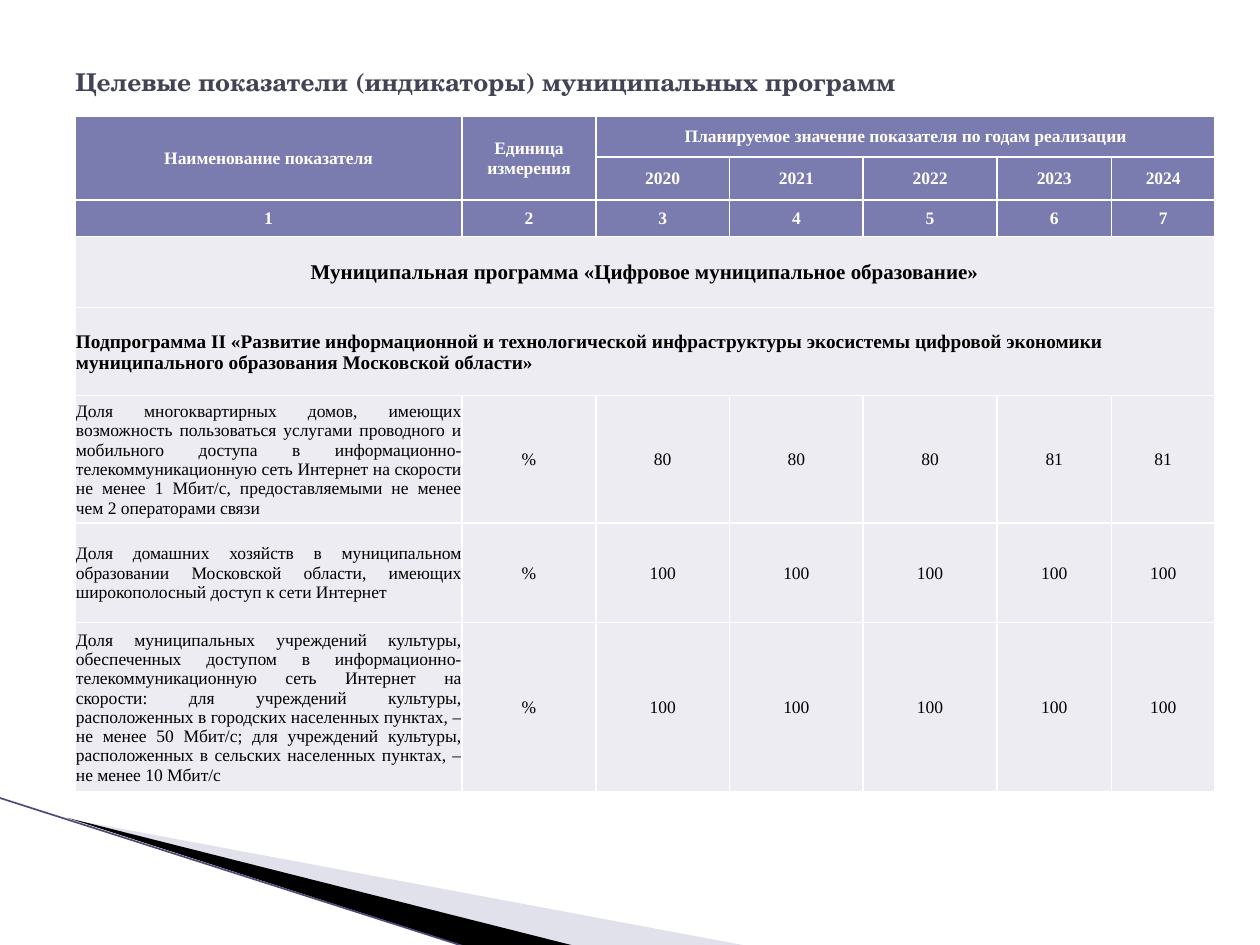
from dataclasses import dataclass

from lxml.etree import SubElement
from pptx import Presentation
from pptx.dml.color import RGBColor
from pptx.enum.shapes import MSO_CONNECTOR
from pptx.enum.text import MSO_ANCHOR, PP_ALIGN
from pptx.oxml.ns import qn
from pptx.util import Pt


@dataclass(frozen=True)
class Theme:
    heading_font: str = "TeX Gyre Schola"
    table_font: str = "Times New Roman"
    heading: RGBColor = RGBColor(0x42, 0x44, 0x56)
    header_fill: RGBColor = RGBColor(0x7A, 0x7B, 0xAE)
    body_fill: RGBColor = RGBColor(0xEC, 0xEC, 0xF2)
    wedge: RGBColor = RGBColor(0xB6, 0xB6, 0xD1)
    edge: RGBColor = RGBColor(0x4E, 0x4B, 0x78)
    white: RGBColor = RGBColor(0xFF, 0xFF, 0xFF)
    black: RGBColor = RGBColor(0, 0, 0)
    heading_size: Pt = Pt(14)
    program_size: Pt = Pt(12)
    subprogram_size: Pt = Pt(11)
    cell_size: Pt = Pt(10)


theme = Theme()


def add_run(paragraph, text, font_name, size, color, bold):
    run = paragraph.add_run()
    run.text = text
    run.font.name = font_name
    run.font.size = size
    run.font.color.rgb = color
    run.font.bold = bold


def add_borders(cell):
    """Draw a thin white line on all four sides of a table cell."""
    properties = cell._tc.get_or_add_tcPr()
    for side in ("a:lnL", "a:lnR", "a:lnT", "a:lnB"):
        border = SubElement(properties, qn(side), w=str(Pt(1)))
        fill = SubElement(border, qn("a:solidFill"))
        SubElement(fill, qn("a:srgbClr"), val=str(theme.white))


presentation = Presentation()
presentation.slide_width = Pt(720)
presentation.slide_height = Pt(540)
slide = presentation.slides.add_slide(presentation.slide_layouts[6])

# Corner decoration
wedges = [
    ([(39.6, 468), (428.4, 540.7), (328.3, 540.7)], theme.wedge, 40),
    ([(38.2, 467.3), (329, 540.7), (267.8, 541.4)], theme.black, 100),
]
for corners, color, opacity in wedges:
    points = [(Pt(x), Pt(y)) for x, y in corners]
    builder = slide.shapes.build_freeform(*points[0])
    builder.add_line_segments(points[1:], close=True)
    wedge = builder.convert_to_shape()
    wedge.shadow.inherit = False
    wedge.line.fill.background()
    wedge.fill.solid()
    wedge.fill.fore_color.rgb = color
    if opacity < 100:
        wedge_color = wedge.fill._xPr.find(".//" + qn("a:srgbClr"))
        SubElement(wedge_color, qn("a:alpha"), val=str(opacity * 1000))

edge = slide.shapes.add_connector(
    MSO_CONNECTOR.STRAIGHT, Pt(-0.7), Pt(455.8), Pt(267.1), Pt(541.4))
edge.line.color.rgb = theme.edge
edge.line.width = Pt(0.95)
SubElement(edge._element.spPr, qn("a:effectLst"))

# Heading
heading = slide.shapes.add_textbox(Pt(36), Pt(21.6), Pt(648), Pt(49.7)).text_frame
heading.word_wrap = True
heading.vertical_anchor = MSO_ANCHOR.MIDDLE
add_run(heading.paragraphs[0], "Целевые показатели (индикаторы) муниципальных программ",
        theme.heading_font, theme.heading_size, theme.heading, True)

# Table of indicators
column_widths = [221.3, 76.4, 76.4, 76.4, 76.4, 65.5, 59.1]
row_heights = [23.4, 23.1, 20.9, 40.6, 50.3, 66.9, 56.9, 88.6]
header_rows = 3
program_row, subprogram_row = 3, 4

rows = [
    ["Наименование показателя", "Единица измерения",
     "Планируемое значение показателя по годам реализации"],
    ["", "", "2020", "2021", "2022", "2023", "2024"],
    ["1", "2", "3", "4", "5", "6", "7"],
    ["Муниципальная программа «Цифровое муниципальное образование»"],
    ["Подпрограмма II «Развитие информационной и технологической инфраструктуры "
     "экосистемы цифровой экономики муниципального образования Московской области»"],
    ["Доля многоквартирных домов, имеющих возможность пользоваться услугами "
     "проводного и мобильного доступа в информационно-телекоммуникационную сеть "
     "Интернет на скорости не менее 1 Мбит/с, предоставляемыми не менее чем "
     "2 операторами связи", "%", "80", "80", "80", "81", "81"],
    ["Доля домашних хозяйств в муниципальном образовании Московской области, "
     "имеющих широкополосный доступ к сети Интернет", "%"] + ["100"] * 5,
    ["Доля муниципальных учреждений культуры, обеспеченных доступом в "
     "информационно-телекоммуникационную сеть Интернет на скорости: для учреждений "
     "культуры, расположенных в городских населенных пунктах, – не менее 50 Мбит/с; "
     "для учреждений культуры, расположенных в сельских населенных пунктах, – "
     "не менее 10 Мбит/с", "%"] + ["100"] * 5,
]

indicators = slide.shapes.add_table(
    len(rows), len(column_widths), Pt(42.8), Pt(66.3),
    Pt(sum(column_widths)), Pt(sum(row_heights))).table
indicators.first_row = False
indicators.horz_banding = False
for column, width in zip(indicators.columns, column_widths):
    column.width = Pt(width)
for row, height in zip(indicators.rows, row_heights):
    row.height = Pt(height)

merges = [((0, 0), (1, 0)), ((0, 1), (1, 1)), ((0, 2), (0, 6)),
          ((program_row, 0), (program_row, 6)), ((subprogram_row, 0), (subprogram_row, 6))]
for first, last in merges:
    indicators.cell(*first).merge(indicators.cell(*last))

row_sizes = {program_row: theme.program_size, subprogram_row: theme.subprogram_size}
for row_index, texts in enumerate(rows):
    in_header = row_index < header_rows
    for column_index in range(len(column_widths)):
        cell = indicators.cell(row_index, column_index)
        add_borders(cell)
        cell.fill.solid()
        cell.fill.fore_color.rgb = theme.header_fill if in_header else theme.body_fill
        cell.vertical_anchor = MSO_ANCHOR.MIDDLE
        cell.margin_left = cell.margin_right = cell.margin_top = Pt(0.6)
        cell.margin_bottom = Pt(0)
        paragraph = cell.text_frame.paragraphs[0]
        paragraph.font.size = theme.cell_size
        if column_index >= len(texts) or not texts[column_index]:
            continue
        if row_index == subprogram_row:
            paragraph.alignment = PP_ALIGN.LEFT
        elif row_index > subprogram_row and column_index == 0:
            paragraph.alignment = PP_ALIGN.JUSTIFY
        else:
            paragraph.alignment = PP_ALIGN.CENTER
        add_run(paragraph, texts[column_index], theme.table_font,
                row_sizes.get(row_index, theme.cell_size),
                theme.white if in_header else theme.black,
                row_index <= subprogram_row)

presentation.save("out.pptx")
